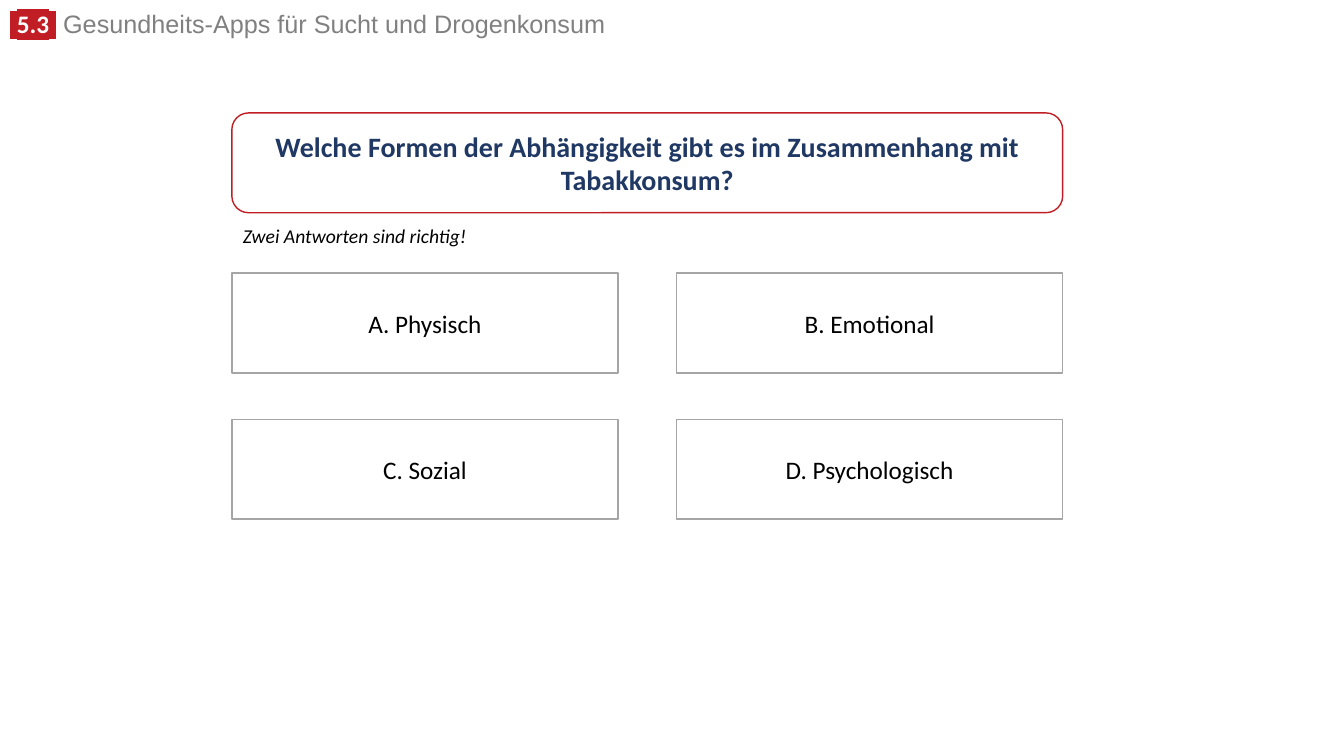
from lxml.etree import SubElement
from pptx import Presentation
from pptx.dml.color import RGBColor
from pptx.enum.shapes import MSO_SHAPE
from pptx.enum.text import MSO_ANCHOR, PP_ALIGN
from pptx.oxml.ns import qn
from pptx.util import Pt

# Content
RED, NAVY, GRAY, LINE_GRAY = "C01E24", "203864", "808080", "A5A5A5"
BLACK, WHITE = "000000", "FFFFFF"
HEADING = [  # text, font, colour, bold, highlight
    (" ", "Arial", WHITE, True, RED),
    ("5.3", "Calibri", WHITE, True, RED),
    (" ", "Arial", WHITE, True, RED),
    (" Gesundheits-Apps für Sucht und Drogenkonsum", "Arial", GRAY, False, None),
]
QUESTION = "Welche Formen der Abhängigkeit gibt es im Zusammenhang mit Tabakkonsum?"
HINT = "Zwei Antworten sind richtig!"
ANSWERS = ["A. Physisch", "B. Emotional", "C. Sozial", "D. Psychologisch"]

# Layout in px, 100 to the inch
SCALE = 9144
LEFT, WIDTH, HEIGHT = 230, 824, 99
ANSWER_TOP, ANSWER_WIDTH = 271, 383
COLUMN_STEP, ROW_STEP = WIDTH - ANSWER_WIDTH, 145


def px(*lengths):
    return [length * SCALE for length in lengths]


def color(value):
    return RGBColor.from_string(value)


def set_font(font, name, size, value, bold=False, italic=False):
    font.name, font.size, font.bold, font.italic = name, Pt(size), bold, italic
    font.color.rgb = color(value)


def add_text(page, *place, wrap=True):
    frame = page.shapes.add_textbox(*px(*place)).text_frame
    frame.word_wrap = wrap
    return frame.paragraphs[0]


def add_card(page, kind, place, text, line, size, value, bold=False):
    card = page.shapes.add_shape(kind, *px(*place))
    card.shadow.inherit = False
    card.fill.solid()
    card.fill.fore_color.rgb = color(WHITE)
    card.line.color.rgb = color(line)
    card.line.width = Pt(1)
    card.text_frame.word_wrap = True
    card.text_frame.vertical_anchor = MSO_ANCHOR.MIDDLE
    para = card.text_frame.paragraphs[0]
    para.text = text
    para.alignment = PP_ALIGN.CENTER
    set_font(para.font, "Calibri", size, value, bold)


deck = Presentation()
deck.slide_width, deck.slide_height = px(1333, 750)
page = deck.slides.add_slide(deck.slide_layouts[6])

# Heading with highlighted section number
para = add_text(page, 0, 9, 952, 35)
para.line_spacing = 0.8
for text, name, value, bold, highlight in HEADING:
    span = para.add_run()
    span.text = text
    set_font(span.font, name, 18, value, bold)
    if highlight:
        properties = span.font._element
        marker = SubElement(properties, qn("a:highlight"))
        SubElement(marker, qn("a:srgbClr"), val=highlight)
        properties.find(qn("a:solidFill")).addnext(marker)

# Question and hint
add_card(page, MSO_SHAPE.ROUNDED_RECTANGLE, (LEFT, 112, WIDTH, HEIGHT),
         QUESTION, RED, 20, NAVY, bold=True)
para = add_text(page, LEFT + 1, 217, 244, 34, wrap=False)
para.text = HINT
set_font(para.font, "Calibri", 14, BLACK, italic=True)

# Answer grid
for index, answer in enumerate(ANSWERS):
    row, column = divmod(index, 2)
    place = (LEFT + column * COLUMN_STEP, ANSWER_TOP + row * ROW_STEP,
             ANSWER_WIDTH, HEIGHT)
    add_card(page, MSO_SHAPE.RECTANGLE, place, answer, LINE_GRAY, 18, BLACK)

deck.save("out.pptx")
